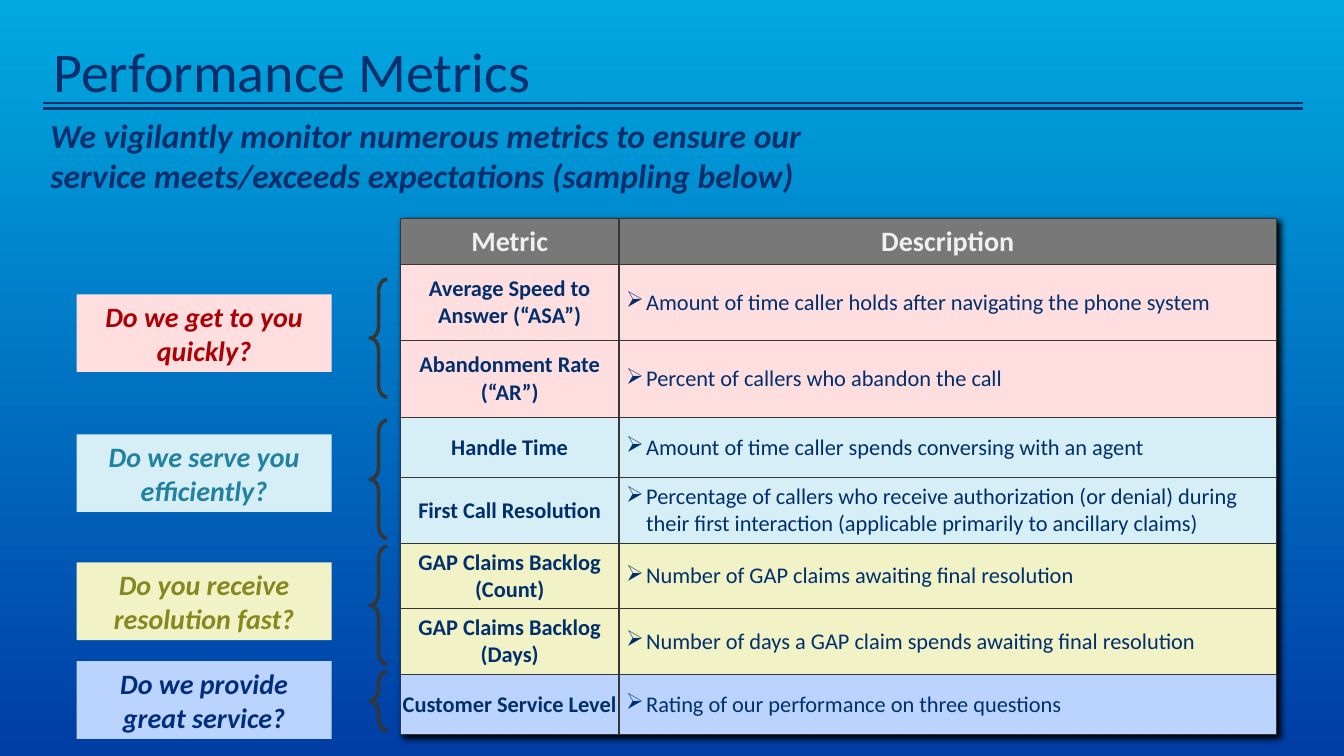
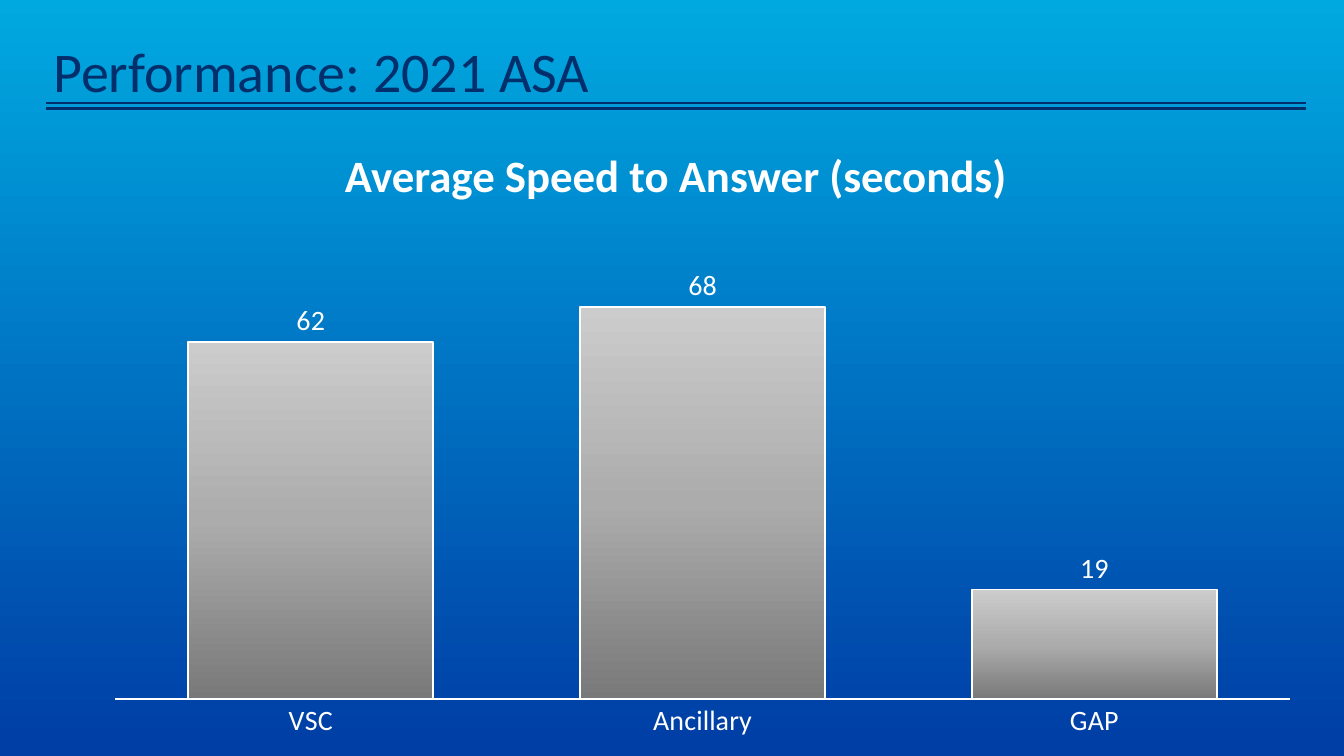
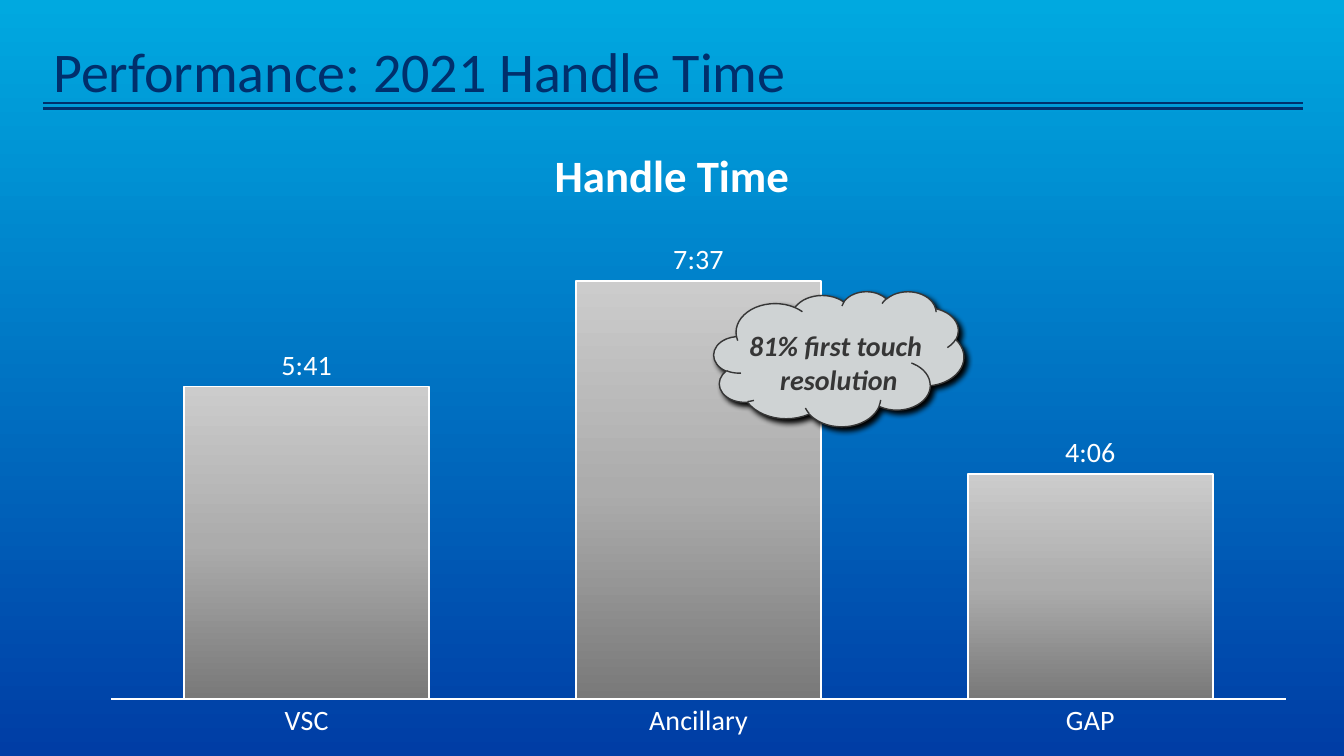
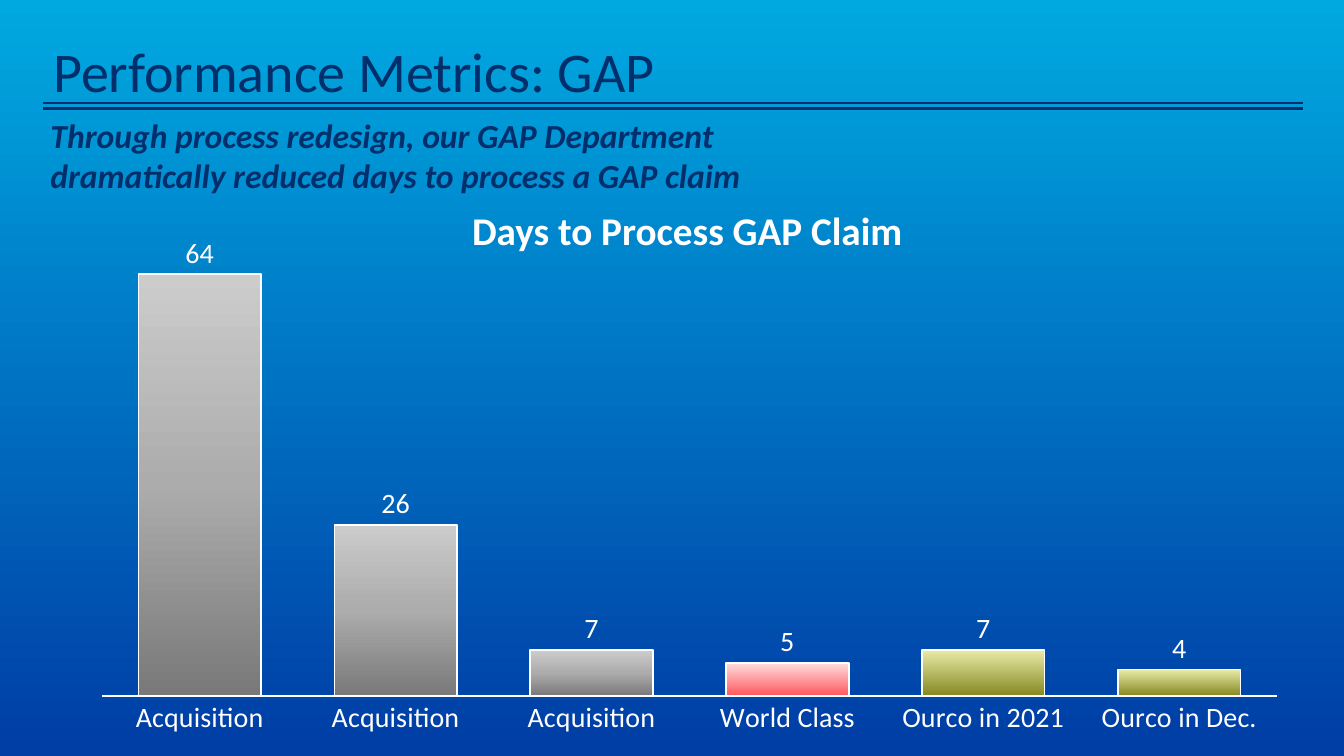
from copy import deepcopy

from lxml import etree
from pptx import Presentation
from pptx.chart import data as chart_data
from pptx.dml import color
from pptx.enum import chart as chart_enum, shapes, text
from pptx.oxml import ns, parse_xml
from pptx.util import Inches, Pt

FONT = "Calibri"
COLOURS = {
    "sky": "00A9E0", "royal": "003DA5", "navy": "002F6C", "white": "FFFFFF",
    "ink": "363636", "header": "787878", "header text": "F0F0F0", "cloud": "CFD3D4",
    "pink": "FFDEDF", "red": "AC0005", "ice": "D6EFF7", "teal": "2181A0",
    "cream": "F1F2C6", "olive": "85881F", "lilac": "BAD4FF", "indigo": "002E7C",
    "grey dark": "797979", "grey mid": "ACACAC", "grey light": "CCCCCC",
    "coral": "FF585D", "coral mid": "FF9B9E", "olive light": "E9EBA9",
}
GREY_BAR = ("grey dark", "grey mid", "grey light")
CORAL_BAR = ("coral", "coral mid", "pink")
OLIVE_BAR = ("olive", "olive light")
CENTER = text.PP_ALIGN.CENTER
SHADOW = (f'<a:outerShdw {ns.nsdecls("a")} blurRad="{Pt(4)}" dist="{Pt(3)}" '
          'dir="2700000" algn="tl" rotWithShape="0"><a:srgbClr val="000000"/></a:outerShdw>')


def rgb(name):
    return color.RGBColor.from_string(COLOURS[name])


def add_child(parent, tag, **attributes):
    return etree.SubElement(parent, ns.qn(tag), attributes)


def paint(fill, name):
    fill.solid()
    fill.fore_color.rgb = rgb(name)


def paint_gradient(fill, names, angle):
    """Spread the named colours evenly; the angle runs counter-clockwise."""
    fill.gradient()
    fill.gradient_angle = angle
    first = fill.gradient_stops[0]._gs
    while len(fill.gradient_stops) < len(names):
        first.getparent().append(deepcopy(first))
    for index, (stop, name) in enumerate(zip(fill.gradient_stops, names)):
        stop.position = index / (len(names) - 1)
        stop.color.rgb = rgb(name)


def draw_line(line, name, width):
    paint(line.fill, name)
    line.width = Pt(width)


class Deck:
    def __init__(self):
        self.presentation = Presentation()
        self.presentation.slide_width = Inches(13.33)
        self.presentation.slide_height = Inches(7.5)
        paint_gradient(self.presentation.slide_master.background.fill, ("sky", "royal"), 270)
        self.slide = None

    def start_slide(self, title, rule_left=0.43):
        self.slide = self.presentation.slides.add_slide(self.presentation.slide_layouts[6])
        box = self.text_box((0.43, 0.39, 11.57, 0.94), [title], 40, "navy")
        box.text_frame.paragraphs[0].line_spacing = 0.9
        for top, width in ((1.02, 1.25), (1.08, 2.25)):
            self.rule(rule_left, top, 12.49, width)

    def rule(self, left, top, length, width):
        connector = self.slide.shapes.add_connector(
            shapes.MSO_CONNECTOR.STRAIGHT, Inches(left), Inches(top),
            Inches(left + length), Inches(top))
        draw_line(connector.line, "navy", width)
        add_child(connector._element.spPr, "a:effectLst")

    def fill_text(self, frame, lines, size, colour, bold=False, italic=False, align=None):
        frame.word_wrap = True
        for index, line in enumerate(lines):
            paragraph = frame.add_paragraph() if index else frame.paragraphs[0]
            paragraph.alignment = align
            run = paragraph.add_run()
            run.text = line
            font = run.font
            font.name, font.size, font.bold, font.italic = FONT, Pt(size), bold, italic
            font.color.rgb = rgb(colour)

    def text_box(self, place, lines, size, colour, **style):
        box = self.slide.shapes.add_textbox(*map(Inches, place))
        self.fill_text(box.text_frame, lines, size, colour, **style)
        return box

    def subtitle(self, line):
        box = self.text_box((0.5, 1.09, 8.08, 0.91), [line], 24, "navy", bold=True, italic=True)
        box.text_frame.margin_left = box.text_frame.margin_right = 0

    def chart_title(self, line, left, top, size):
        self.text_box((left, top, 6.89, 0.6), [line], size, "white", bold=True, align=CENTER)

    def shape(self, kind, place, fill=None, line=None, width=1):
        shape = self.slide.shapes.add_shape(kind, *map(Inches, place))
        shape.shadow.inherit = False
        if fill:
            paint(shape.fill, fill)
        else:
            shape.fill.background()
        if line:
            draw_line(shape.line, line, width)
        else:
            shape.line.fill.background()
        return shape

    def question(self, top, line, fill, colour):
        label = self.shape(shapes.MSO_SHAPE.RECTANGLE, (0.76, top, 2.53, 0.77), fill)
        self.fill_text(label.text_frame, [line], 20, colour, bold=True, italic=True,
                       align=CENTER)

    def brace(self, top, height):
        brace = self.shape(shapes.MSO_SHAPE.LEFT_BRACE, (3.67, top, 0.17, height),
                           line="ink", width=2.5)
        brace.adjustments[0] = 0.713

    def cloud(self, place):
        cloud = self.shape(shapes.MSO_SHAPE.CLOUD, place, "cloud", "ink")
        cloud._element.spPr.find(ns.qn("a:effectLst")).append(parse_xml(SHADOW))

    def table(self, place, widths, heights):
        frame = self.slide.shapes.add_table(len(heights), len(widths), *map(Inches, place))
        table = frame.table
        table.first_row = table.horz_banding = False
        effects = etree.Element(ns.qn("a:effectLst"))
        effects.append(parse_xml(SHADOW))
        table._tbl.tblPr.insert(0, effects)
        for column, width in zip(table.columns, widths):
            column.width = Inches(width)
        for row, height in zip(table.rows, heights):
            row.height = Inches(height)
        return table

    def cell(self, cell, line, fill, margin, size=16, colour="navy", bulleted=False):
        for side in ("a:lnL", "a:lnR", "a:lnT", "a:lnB"):
            border = add_child(cell._tc.get_or_add_tcPr(), side, w=str(Pt(1)))
            add_child(add_child(border, "a:solidFill"), "a:srgbClr", val=COLOURS["ink"])
        paint(cell.fill, fill)
        cell.vertical_anchor = text.MSO_ANCHOR.MIDDLE
        cell.margin_left = cell.margin_right = Inches(margin)
        self.fill_text(cell.text_frame, [line], size, colour, bold=not bulleted,
                       align=None if bulleted else CENTER)
        if bulleted:
            properties = cell.text_frame.paragraphs[0]._p.get_or_add_pPr()
            properties.set("marL", str(Inches(0.26)))
            properties.set("indent", str(Inches(-0.2)))
            add_child(properties, "a:buChar", char="➢")

    def column_chart(self, left, top, bars, maximum, plot_top=0.037,
                     number_format="General", point_fills=None):
        source = chart_data.CategoryChartData(number_format=number_format)
        source.categories = [name for name, _ in bars]
        source.add_series("Series 1", [value for _, value in bars])
        chart = self.slide.shapes.add_chart(
            chart_enum.XL_CHART_TYPE.COLUMN_CLUSTERED, Inches(left), Inches(top),
            Inches(12.22), Inches(5.17), source).chart
        chart.has_legend = chart.has_title = False
        chart.font.name, chart.font.size = FONT, Pt(20)
        chart.font.color.rgb = rgb("white")

        values = chart.value_axis
        values.visible = values.has_major_gridlines = False
        values.minimum_scale, values.maximum_scale = 0, maximum
        categories = chart.category_axis
        categories.major_tick_mark = chart_enum.XL_TICK_MARK.NONE
        draw_line(categories.format.line, "white", 1.75)

        plot = chart.plots[0]
        plot.gap_width, plot.vary_by_categories = 60, False
        plot.has_data_labels = True
        labels = plot.data_labels
        labels.show_value = True
        labels.position = chart_enum.XL_LABEL_POSITION.OUTSIDE_END
        labels.number_format, labels.number_format_is_linked = number_format, False

        series = plot.series[0]
        series.invert_if_negative = False
        formats = [(series.format, GREY_BAR)]
        formats += [(series.points[index].format, names)
                    for index, names in (point_fills or {}).items()]
        for bar_format, names in formats:
            paint_gradient(bar_format.fill, names, 90)
            draw_line(bar_format.line, "white", 1.25)
        self.place_plot(chart, plot_top)

    def place_plot(self, chart, top):
        area = chart._chartSpace.chart.plotArea
        for old in area.findall(ns.qn("c:layout")):
            area.remove(old)
        layout = etree.Element(ns.qn("c:layout"))
        area.insert(0, layout)
        manual = add_child(layout, "c:manualLayout")
        settings = {"layoutTarget": "inner", "xMode": "edge", "yMode": "edge",
                    "x": 0.045, "y": top, "w": 0.955, "h": 0.885}
        for name, value in settings.items():
            add_child(manual, f"c:{name}", val=str(value))


# question, fill, text colour, label top, brace top, brace height, (metric, description, height)
GROUPS = [
    ("Do we get to you quickly?", "pink", "red", 2.92, 2.77, 1.17, [
        ("Average Speed to Answer (“ASA”)",
         "Amount of time caller holds after navigating the phone system", 0.76),
        ("Abandonment Rate (“AR”)", "Percent of callers who abandon the call", 0.76)]),
    ("Do we serve you efficiently?", "ice", "teal", 4.31, 4.17, 1.17, [
        ("Handle Time", "Amount of time caller spends conversing with an agent", 0.6),
        ("First Call Resolution",
         "Percentage of callers who receive authorization (or denial) during their first "
         "interaction (applicable primarily to ancillary claims)", 0.65)]),
    ("Do you receive resolution fast?", "cream", "olive", 5.58, 5.42, 1.17, [
        ("GAP Claims Backlog (Count)", "Number of GAP claims awaiting final resolution", 0.65),
        ("GAP Claims Backlog (Days)",
         "Number of days a GAP claim spends awaiting final resolution", 0.65)]),
    ("Do we provide great service?", "lilac", "indigo", 6.56, 6.66, 0.59, [
        ("Customer Service Level", "Rating of our performance on three questions", 0.6)]),
]


def metrics_slide(deck):
    deck.start_slide("Performance Metrics")
    deck.subtitle("We vigilantly monitor numerous metrics to ensure our service "
                  "meets/exceeds expectations (sampling below)")
    rows = [(fill, *metric) for _, fill, *_, metrics in GROUPS for metric in metrics]
    table = deck.table((3.97, 2.17, 8.69, 5.13), (2.17, 6.52),
                       [0.45] + [height for *_, height in rows])
    for column, heading in enumerate(("Metric", "Description")):
        deck.cell(table.cell(0, column), heading, "header", 0.04, 20, "header text")
    for index, (fill, metric, description, _) in enumerate(rows, 1):
        deck.cell(table.cell(index, 0), metric, fill, 0.02)
        deck.cell(table.cell(index, 1), description, fill, 0.01, bulleted=True)
    for question, fill, colour, label_top, brace_top, brace_height, _ in GROUPS:
        deck.question(label_top, question, fill, colour)
        deck.brace(brace_top, brace_height)


def answer_speed_slide(deck):
    deck.start_slide("Performance: 2021 ASA", rule_left=0.46)
    deck.column_chart(0.59, 2.17, [("VSC", 62), ("Ancillary", 68), ("GAP", 19)], 80)
    deck.chart_title("Average Speed to Answer (seconds)", 3.26, 1.42, 32)


def handle_time_slide(deck):
    deck.start_slide("Performance: 2021 Handle Time")
    day_fractions = [("VSC", 0.2373), ("Ancillary", 0.3174), ("GAP", 0.1709)]
    deck.column_chart(0.55, 2.17, day_fractions, 0.35, number_format="h:mm")
    deck.chart_title("Handle Time", 3.22, 1.42, 32)
    deck.cloud((7.08, 2.89, 2.48, 1.34))
    deck.text_box((6.82, 3.21, 3, 0.77), ["81% first touch ", "resolution"], 20, "ink",
                  bold=True, italic=True, align=CENTER)


def gap_slide(deck):
    deck.start_slide("Performance Metrics: GAP")
    deck.subtitle("Through process redesign, our GAP Department dramatically reduced "
                  "days to process a GAP claim")
    deck.chart_title("Days to Process GAP Claim", 3.37, 2, 28)
    bars = [("Acquisition", 64), ("Acquisition", 26), ("Acquisition", 7),
            ("World Class", 5), ("Ourco in 2021", 7), ("Ourco in Dec.", 4)]
    deck.column_chart(0.46, 2.33, bars, 70, plot_top=0,
                      point_fills={3: CORAL_BAR, 4: OLIVE_BAR, 5: OLIVE_BAR})


def main():
    deck = Deck()
    for build in (metrics_slide, answer_speed_slide, handle_time_slide, gap_slide):
        build(deck)
    deck.presentation.save("out.pptx")


if __name__ == "__main__":
    main()
